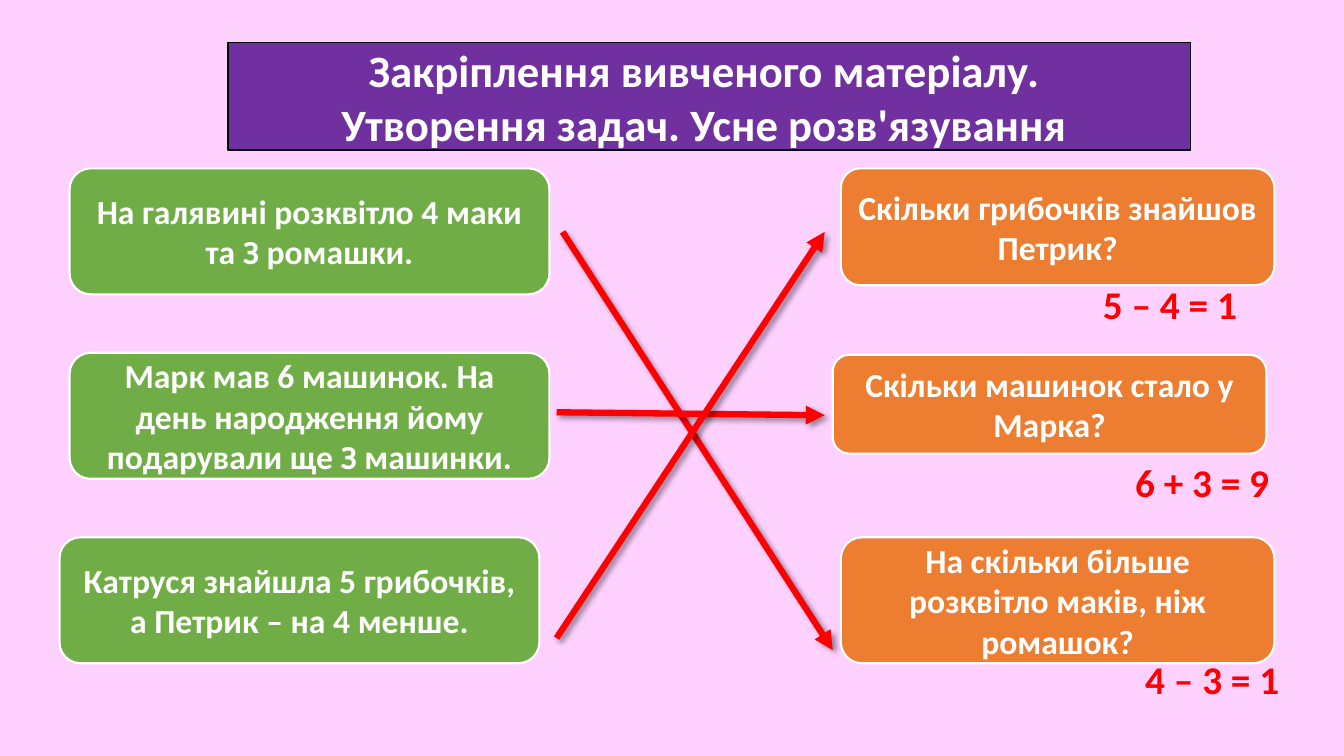
from lxml import etree
from pptx import Presentation
from pptx.dml.color import RGBColor
from pptx.enum.shapes import MSO_CONNECTOR, MSO_SHAPE
from pptx.enum.text import MSO_ANCHOR, MSO_AUTO_SIZE, PP_ALIGN
from pptx.oxml import parse_xml
from pptx.oxml.ns import nsdecls, qn
from pptx.util import Inches, Pt

RECTANGLE = MSO_SHAPE.RECTANGLE
ROUNDED = MSO_SHAPE.ROUNDED_RECTANGLE
STRAIGHT = MSO_CONNECTOR.STRAIGHT
MIDDLE = MSO_ANCHOR.MIDDLE
GROW = MSO_AUTO_SIZE.SHAPE_TO_FIT_TEXT
CENTER = PP_ALIGN.CENTER
LEFT = PP_ALIGN.LEFT

PINK = RGBColor(0xFF, 0xD1, 0xFF)
PURPLE = RGBColor(0x70, 0x30, 0xA0)
GREEN = RGBColor(0x70, 0xAD, 0x47)
ORANGE = RGBColor(0xED, 0x7D, 0x31)
RED = RGBColor(0xFF, 0x00, 0x00)
WHITE = RGBColor(0xFF, 0xFF, 0xFF)
BLACK = RGBColor(0x00, 0x00, 0x00)

ARROW_SHADOW = (
    f'<a:effectLst {nsdecls("a")}>'
    f'<a:outerShdw blurRad="{Pt(4)}" dist="{Pt(3)}" dir="{45 * 60000}" algn="tl" rotWithShape="0">'
    '<a:srgbClr val="000000"><a:alpha val="40000"/></a:srgbClr>'
    '</a:outerShdw></a:effectLst>'
)


class SlideBuilder:
    font_name = "Calibri"

    def __init__(self, slide):
        self.slide = slide

    def background(self, color):
        fill = self.slide.background.fill
        fill.solid()
        fill.fore_color.rgb = color

    def add_lines(self, text_frame, lines, size, color, alignment):
        text_frame.word_wrap = True
        font_values = {"name": self.font_name, "size": Pt(size), "bold": True}
        for index, line in enumerate(lines):
            paragraph = text_frame.add_paragraph() if index else text_frame.paragraphs[0]
            paragraph.alignment = alignment
            run = paragraph.add_run()
            run.text = line
            for name, value in font_values.items():
                setattr(run.font, name, value)
            run.font.color.rgb = color

    def box(self, kind, bounds, lines, fill, outline, outline_width, size):
        shape = self.slide.shapes.add_shape(kind, *map(Inches, bounds))
        shape.shadow.inherit = False
        shape.fill.solid()
        shape.fill.fore_color.rgb = fill
        shape.line.color.rgb = outline
        shape.line.width = Pt(outline_width)
        shape.text_frame.vertical_anchor = MIDDLE
        self.add_lines(shape.text_frame, lines, size, WHITE, CENTER)

    def card(self, bounds, lines, fill):
        self.box(ROUNDED, bounds, lines, fill, WHITE, 1.5, 24)

    def answer(self, bounds, text):
        shape = self.slide.shapes.add_textbox(*map(Inches, bounds))
        self.add_lines(shape.text_frame, [text], 28, RED, LEFT)
        shape.text_frame.auto_size = GROW

    def arrow(self, start, end):
        connector = self.slide.shapes.add_connector(STRAIGHT, *map(Inches, start + end))
        connector.line.color.rgb = RED
        connector.line.width = Pt(4.5)
        properties = connector._element.spPr
        etree.SubElement(properties.find(qn("a:ln")), qn("a:tailEnd"), type="triangle")
        properties.append(parse_xml(ARROW_SHADOW))


def main():
    presentation = Presentation()
    presentation.slide_width = Inches(13.33)
    presentation.slide_height = Inches(7.5)
    builder = SlideBuilder(presentation.slides.add_slide(presentation.slide_layouts[6]))
    builder.background(PINK)

    conditions = [
        (0.69, 1.67, ["На галявині розквітло 4 маки", "та З ромашки."]),
        (0.69, 3.5, ["Марк мав 6 машинок. На день народження йому подарували ще З машинки."]),
        (0.59, 5.33, ["Катруся знайшла 5 грибочків,", "а Петрик – на 4 менше."]),
    ]
    for left, top, lines in conditions:
        builder.card((left, top, 4.76, 1.25), lines, GREEN)

    questions = [
        (8.34, 1.67, 1.16, ["Скільки грибочків знайшов", "Петрик?"]),
        (8.26, 3.52, 0.98, ["Скільки машинок стало у Марка?"]),
        (8.34, 5.33, 1.25, ["На скільки більше розквітло маків, ніж ромашок?"]),
    ]
    for left, top, height, lines in questions:
        builder.card((left, top, 4.3, height), lines, ORANGE)

    matches = [
        ((5.58, 2.3), (8.26, 6.45)),
        ((5.52, 4.09), (8.18, 4.12)),
        ((5.52, 6.33), (8.18, 2.3)),
    ]
    for start, end in matches:
        builder.arrow(start, end)

    answers = [
        (10.84, 2.73, 1.72, "5 – 4 = 1"),
        (11.16, 4.5, 1.65, "6 + 3 = 9"),
        (11.26, 6.45, 1.65, "4 – 3 = 1"),
    ]
    for left, top, width, text in answers:
        builder.answer((left, top, width, 0.57), text)

    title = ["Закріплення вивченого матеріалу. ", "Утворення задач. Усне розв'язування "]
    builder.box(RECTANGLE, (2.26, 0.42, 9.55, 1.07), title, PURPLE, BLACK, 1, 32)

    presentation.save("out.pptx")


if __name__ == "__main__":
    main()
